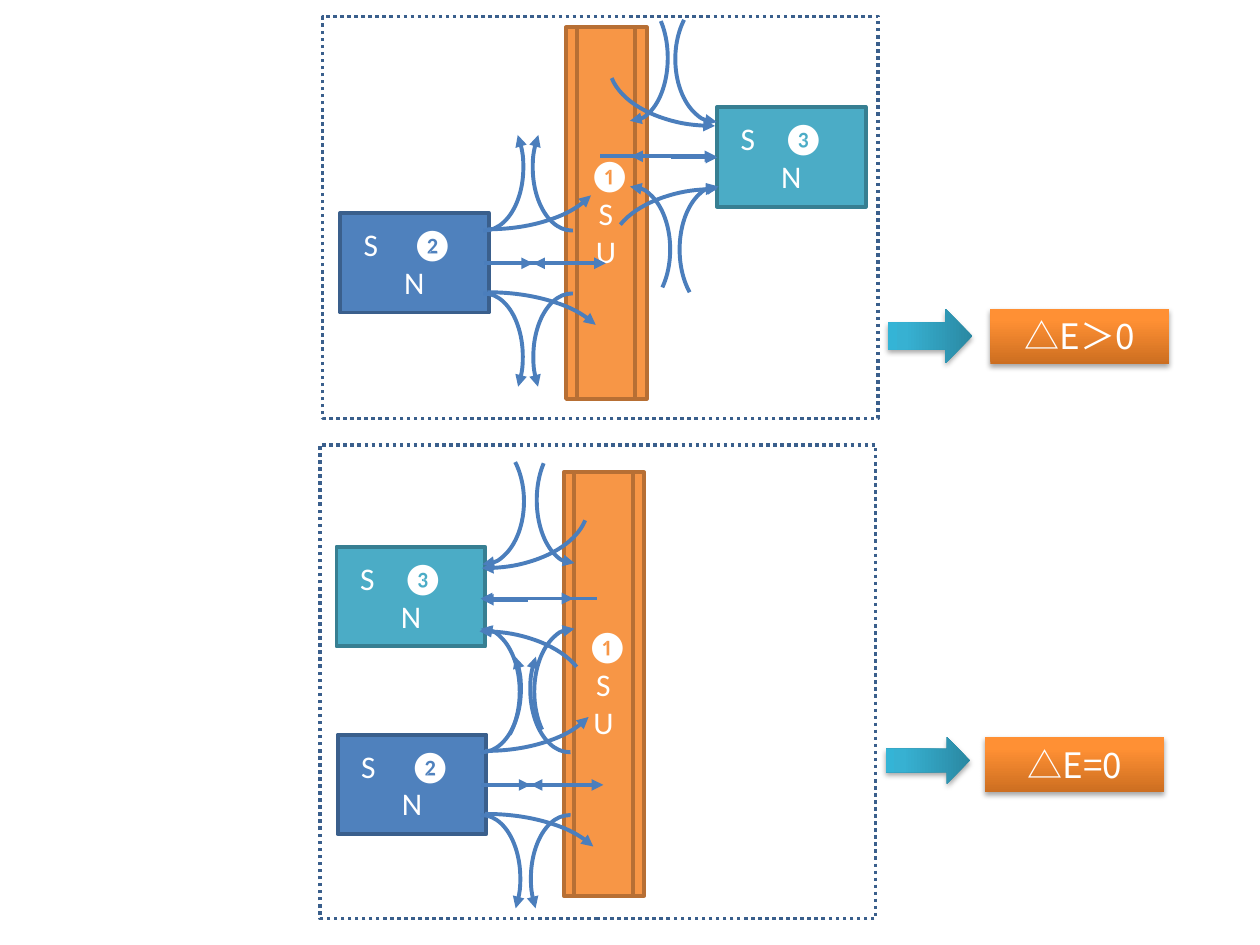
from dataclasses import dataclass

from lxml.etree import SubElement
from pptx import Presentation
from pptx.dml.color import RGBColor
from pptx.enum.dml import MSO_LINE as Dash
from pptx.enum.shapes import MSO_CONNECTOR as Link, MSO_SHAPE as Form
from pptx.enum.text import MSO_ANCHOR as Anchor, MSO_AUTO_SIZE as Auto, PP_ALIGN as Align
from pptx.oxml.ns import qn
from pptx.util import Pt


@dataclass(frozen=True)
class Theme:
    white: str = "FFFFFF"
    teal: tuple = ("4BACC6", "377F92")
    blue: tuple = ("4F81BD", "3A5F8C")
    amber: tuple = ("F79646", "B76F34")
    curve: str = "4B7EBC"
    frame: str = "3A5F8C"
    glow: tuple = ((0, "CC6E20"), (80, "FF9034"), (100, "FF9136"))
    sea: tuple = ((0, "2A88A2"), (80, "37B1D2"), (100, "34B4D6"))
    body: tuple = (18, "Calibri")
    sum: tuple = (20, "Noto Sans CJK SC")
    line: float = 2.25
    dots: float = 2


@dataclass(frozen=True)
class Fan:
    """Two arcs around a straight line; widths and offsets from the fan's tip."""
    end: str
    low: tuple  # width, sweep end
    high: tuple
    reach: float
    drop: float
    rise: float
    lead: float = 0
    shift: float = 0


T = Theme()
START, TALL = 161.33, 72
PULL = Fan("head", (121.7, 206.47), (120.2, 210.93), 66.2, 18.7, 17.3, shift=1.4)
PUSH = Fan("tail", (139.7, 206.47), (131.8, 206.47), 69.8, 16.6, 19.4, lead=-2.9)
ENTER = Fan("head", (43.2, 34.19), (46.1, 30.69), 26.6, 16.6, 20.2, shift=1)
LEAVE = Fan("tail", (43.9, 25.09), (44.6, 26.52), 23.8, 17.3, 18.7, lead=4)
SHED = Fan("tail", (43.9, 25.09), (44.6, 26.52), 23, 17.3, 18.7, lead=-1)
DRAW = Fan("head", (44.6, 30.35), (41.8, 30.69), 27.4, 17.3, 20.2)
BLOCK = (85, 56.9)


def rgb(code):
    return RGBColor.from_string(code)


def put(slide, form, box, fill=None, line=None, width=T.line):
    shape = slide.shapes.add_shape(form, *map(Pt, box))
    shape.shadow.inherit = False
    if fill:
        shape.fill.solid()
        shape.fill.fore_color.rgb = rgb(fill)
    else:
        shape.fill.background()
    if line:
        stroke(shape, line, width)
    else:
        shape.line.fill.background()
    return shape


def stroke(shape, color, width):
    shape.line.color.rgb = rgb(color)
    shape.line.width = Pt(width)


def tip(shape, end):
    """Put a triangle at the head or tail of a line."""
    SubElement(shape.element.spPr.find(qn("a:ln")), qn(f"a:{end}End"), type="triangle")


def write(frame, lines, style, anchor=Anchor.MIDDLE):
    size, face = style
    frame.word_wrap = True
    frame.vertical_anchor = anchor
    for i, text in enumerate(lines):
        para = frame.add_paragraph() if i else frame.paragraphs[0]
        para.alignment = Align.LEFT if "\t" in text else Align.CENTER
        run = para.add_run()
        run.text = text
        run.font.size = Pt(size)
        run.font.name = face
        run.font.color.rgb = rgb(T.white)
        SubElement(run.font._element, qn("a:ea"), typeface=face)


def glaze(shape, stops):
    """Give a shape an upward gradient and a soft shadow below."""
    shape.fill.gradient()
    shape.fill.gradient_angle = 90
    props = shape.element.spPr
    bank = props.find(".//" + qn("a:gsLst"))
    for old in list(bank):
        bank.remove(old)
    for pos, color in stops:
        stop = SubElement(bank, qn("a:gs"), pos=str(pos * 1000))
        SubElement(stop, qn("a:srgbClr"), val=color)
    shade = SubElement(props.find(qn("a:effectLst")), qn("a:outerShdw"),
                       blurRad=str(Pt(3.1)), dist=str(Pt(1.8)),
                       dir="5400000", rotWithShape="0")
    ink = SubElement(shade, qn("a:srgbClr"), val="000000")
    SubElement(ink, qn("a:alpha"), val="35000")


def arc(slide, mid, top, span, end, flips):
    width, sweep = span
    shape = put(slide, Form.ARC, (mid - width / 2, top, width, TALL), line=T.curve)
    shape.adjustments[0] = START
    shape.adjustments[1] = sweep
    for flip in flips:
        shape.element.spPr.find(qn("a:xfrm")).set(flip, "1")
    tip(shape, end)


def spread(slide, fan, x, y, way):
    """Draw a fan with its tip at x, y; way is 1 to the right, -1 to the left."""
    side = ["flipH"] if way < 0 else []
    arc(slide, x, y + fan.drop, fan.low, fan.end, side)
    start = x + way * fan.lead
    line = slide.shapes.add_connector(
        Link.STRAIGHT, Pt(start), Pt(y), Pt(start + way * fan.reach), Pt(y))
    stroke(line, T.curve, T.line)
    tip(line, fan.end)
    SubElement(line.element.spPr, qn("a:effectLst"))
    arc(slide, x + way * fan.shift, y - fan.rise - TALL, fan.high, fan.end,
        side + ["flipV"])


def block(slide, x, y, mark, tab, tint):
    shape = put(slide, Form.RECTANGLE, (x, y, *BLOCK), *tint)
    frame = shape.text_frame
    frame.margin_left = frame.margin_right = Pt(13.5)
    write(frame, [f"S\t{mark}", "N"], T.body)
    stops = SubElement(frame.paragraphs[0]._p.get_or_add_pPr(), qn("a:tabLst"))
    SubElement(stops, qn("a:tab"), pos=str(Pt(tab)), algn="l")


def shell(slide, x, y, tall):
    """A wide core between two thin walls."""
    wall, core = 6, 33.5
    mid = put(slide, Form.RECTANGLE, (x + wall, y, core, tall), *T.amber)
    write(mid.text_frame, ["❶", "S", "U"], T.body)
    for left, wide in ((x + wall + core, 6.5), (x, wall)):
        put(slide, Form.RECTANGLE, (left, y, wide, tall), *T.amber)


def panel(slide, box, bar, two, three, tips, way):
    """bar is top and height; two and three are block corners;
    tips are the x of block 3's fan, its y, and the x of the shell's fan."""
    x, y, wide, tall = box
    near, level, far = x + tips[0], y + tips[1], x + tips[2]
    block(slide, x + three[0], y + three[1], "❸", 24, T.teal)
    shell(slide, x + 139.2, y + bar[0], bar[1])
    spread(slide, PULL, near, level, way)
    block(slide, x + two[0], y + two[1], "❷", 27.5, T.blue)
    edge, mid = x + two[0] + BLOCK[0], y + two[1] + BLOCK[1] / 2 + 0.3
    spread(slide, PUSH, edge, mid, 1)
    spread(slide, ENTER, near + 0.7, level + 0.7, way)
    spread(slide, LEAVE, edge - 2.5, mid, 1)
    spread(slide, SHED, x + 142.4, mid, -1)
    spread(slide, DRAW, far, level, -way)
    frame = put(slide, Form.RECTANGLE, box, line=T.frame, width=T.dots)
    frame.line.dash_style = Dash.ROUND_DOT


def verdict(slide, box, text, mid, thick):
    """A result box; mid is the centre of the arrow that leads to it."""
    shape = put(slide, Form.RECTANGLE, box)
    glaze(shape, T.glow)
    write(shape.text_frame, [text], T.sum, Anchor.TOP)
    shape.text_frame.auto_size = Auto.SHAPE_TO_FIT_TEXT
    span = 48.2
    arrow = put(slide, Form.DOWN_ARROW,
                (mid[0] - thick / 2, mid[1] - span / 2, thick, span))
    arrow.rotation = 270
    glaze(arrow, T.sea)


def main():
    deck = Presentation()
    deck.slide_width, deck.slide_height = Pt(720), Pt(540)
    slide = deck.slides.add_slide(deck.slide_layouts[6])
    panel(slide, (184.3, 9.4, 317.5, 229.7), (6.2, 212.4), (10, 112.3),
          (225.4, 51.8), (225, 79.9, 176.4), -1)
    verdict(slide, (565.9, 176.4, 102.2, 31.7), "△E＞0", (531.7, 192), 31)
    panel(slide, (182.9, 254.2, 317.5, 270.7), (15.8, 241.9), (10, 165.6),
          (9.4, 58.3), (91.8, 87.8, 144.7), 1)
    verdict(slide, (563, 421.2, 102.2, 31.7), "△E=0", (530.3, 434.5), 26.6)
    deck.save("out.pptx")


if __name__ == "__main__":
    main()
